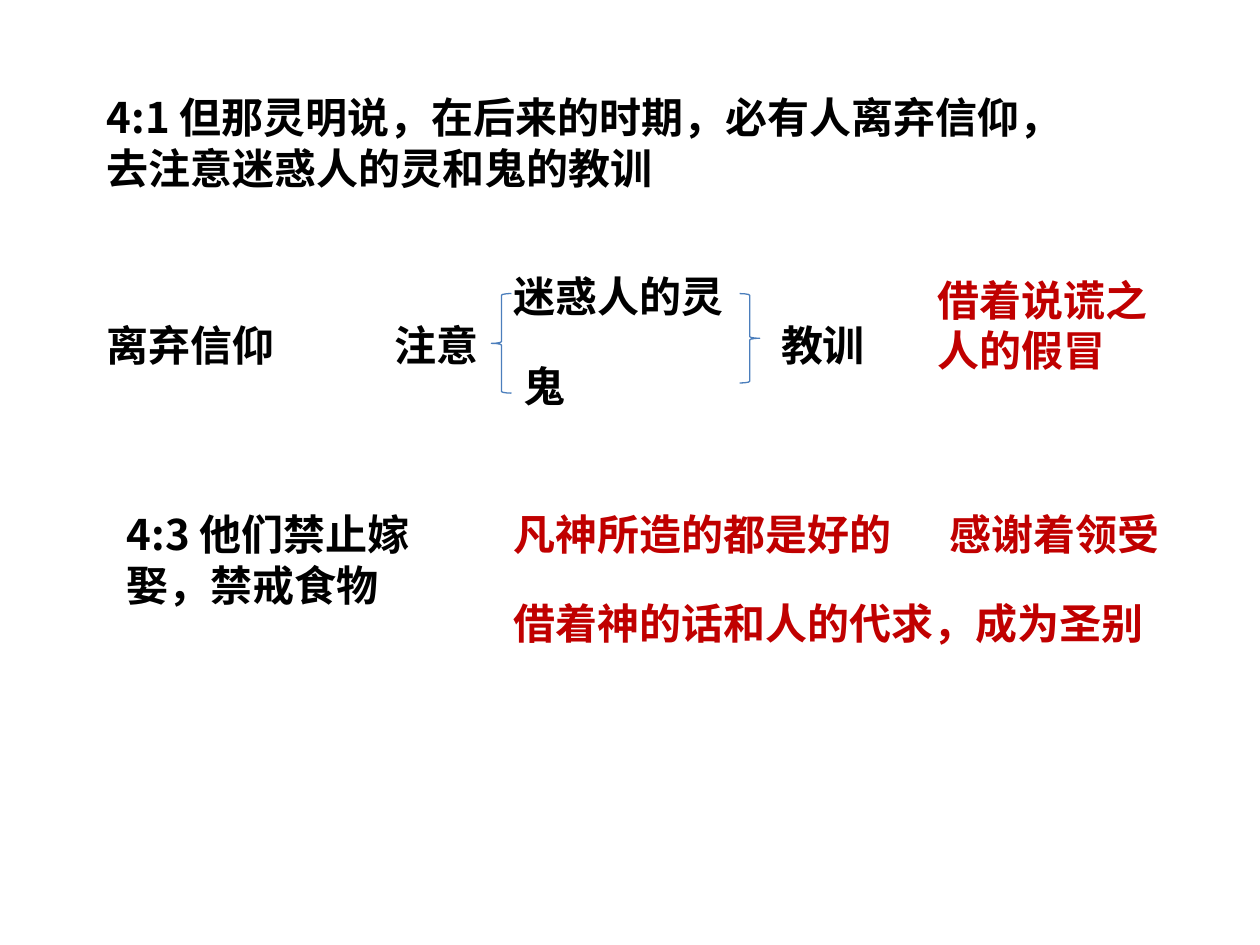
import pptx
import pptx.util
import pptx.dml.color
import pptx.enum.shapes
import pptx.enum.text
import lxml.etree

WIDTH, HEIGHT = 10, 7.5
CJK, LATIN = "Noto Sans CJK SC", "Calibri"
BLACK, RED, BLUE = "000000", "C00000", "4B7EBC"
LINE_HEIGHT, PADDING = 0.41, 0.09
ROWS = {"verse 1": 0.68, "upper": 2.1, "reason": 2.13, "brace": 2.33,
        "middle": 2.49, "lower": 2.81, "verse 3": 3.99, "closing": 4.69}
MARGIN, CENTRE = 0.75, 3.98

TEXTS = [
    ("4:1 但那灵明说，在后来的时期，必有人离弃信仰，去注意迷惑人的灵和鬼的教训",
     MARGIN, "verse 1", 7.95, 2, CJK, BLACK),
    ("离弃信仰", MARGIN, "middle", 1.55, 1, LATIN, BLACK),
    ("注意", 3.03, "middle", 0.94, 1, LATIN, BLACK),
    ("迷惑人的灵", CENTRE, "upper", 1.88, 1, LATIN, BLACK),
    ("鬼", 4.06, "lower", 0.54, 1, LATIN, BLACK),
    ("教训", 6.1, "middle", 0.88, 1, LATIN, BLACK),
    ("借着说谎之人的假冒", 7.34, "reason", 1.88, 2, CJK, RED),
    ("4:3 他们禁止嫁娶，禁戒食物", 0.91, "verse 3", 2.76, 2, CJK, BLACK),
    ("凡神所造的都是好的", CENTRE, "verse 3", 3.21, 1, CJK, RED),
    ("感谢着领受", 7.44, "verse 3", 1.88, 1, CJK, RED),
    ("借着神的话和人的代求，成为圣别", CENTRE, "closing", 5.25, 1, CJK, RED),
]
BRACES = [("LEFT_BRACE", 3.9, 0.79), ("RIGHT_BRACE", 5.87, 0.71)]


def colour(value):
    """Turn a hex string into a colour."""
    return pptx.dml.color.RGBColor.from_string(value)


def add_text(slide, text, left, row, width, lines, font, ink):
    """Add one bold statement that wraps only when it has several lines."""
    height = lines * LINE_HEIGHT + PADDING
    box = slide.shapes.add_textbox(*map(pptx.util.Inches, (left, ROWS[row], width, height)))
    frame = box.text_frame
    frame.text = text
    frame.word_wrap = lines > 1
    frame.auto_size = pptx.enum.text.MSO_AUTO_SIZE.SHAPE_TO_FIT_TEXT
    for span in frame.paragraphs[0].runs:
        span.font.size = pptx.util.Pt(24)
        span.font.bold = True
        span.font.name = font
        span.font.color.rgb = colour(ink)
        east_asian = lxml.etree.SubElement(span.font._element, pptx.oxml.ns.qn("a:ea"))
        east_asian.set("typeface", CJK)


def add_brace(slide, kind, left, height):
    """Add one thin brace beside the two sources of teaching."""
    shape = pptx.enum.shapes.MSO_SHAPE[kind]
    brace = slide.shapes.add_shape(
        shape, *map(pptx.util.Inches, (left, ROWS["brace"], 0.16, height)))
    brace.shadow.inherit = False
    brace.fill.background()
    brace.line.color.rgb = colour(BLUE)
    brace.line.width = pptx.util.Pt(0.75)


def main():
    """Build and save the slide."""
    deck = pptx.Presentation()
    deck.slide_width = pptx.util.Inches(WIDTH)
    deck.slide_height = pptx.util.Inches(HEIGHT)
    page = deck.slides.add_slide(deck.slide_layouts[6])
    for entry in TEXTS:
        add_text(page, *entry)
    for entry in BRACES:
        add_brace(page, *entry)
    deck.save("out.pptx")


if __name__ == "__main__":
    main()
